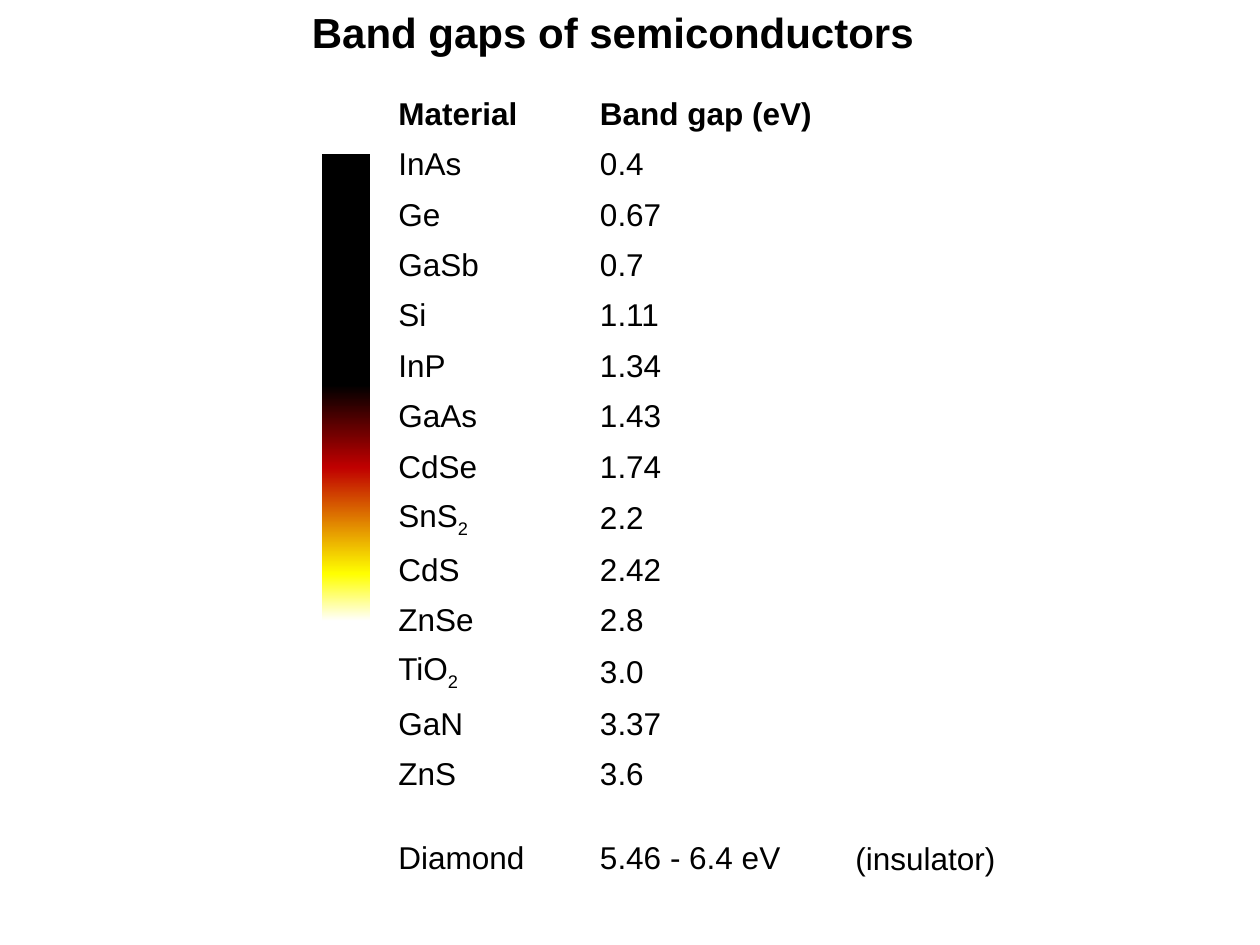
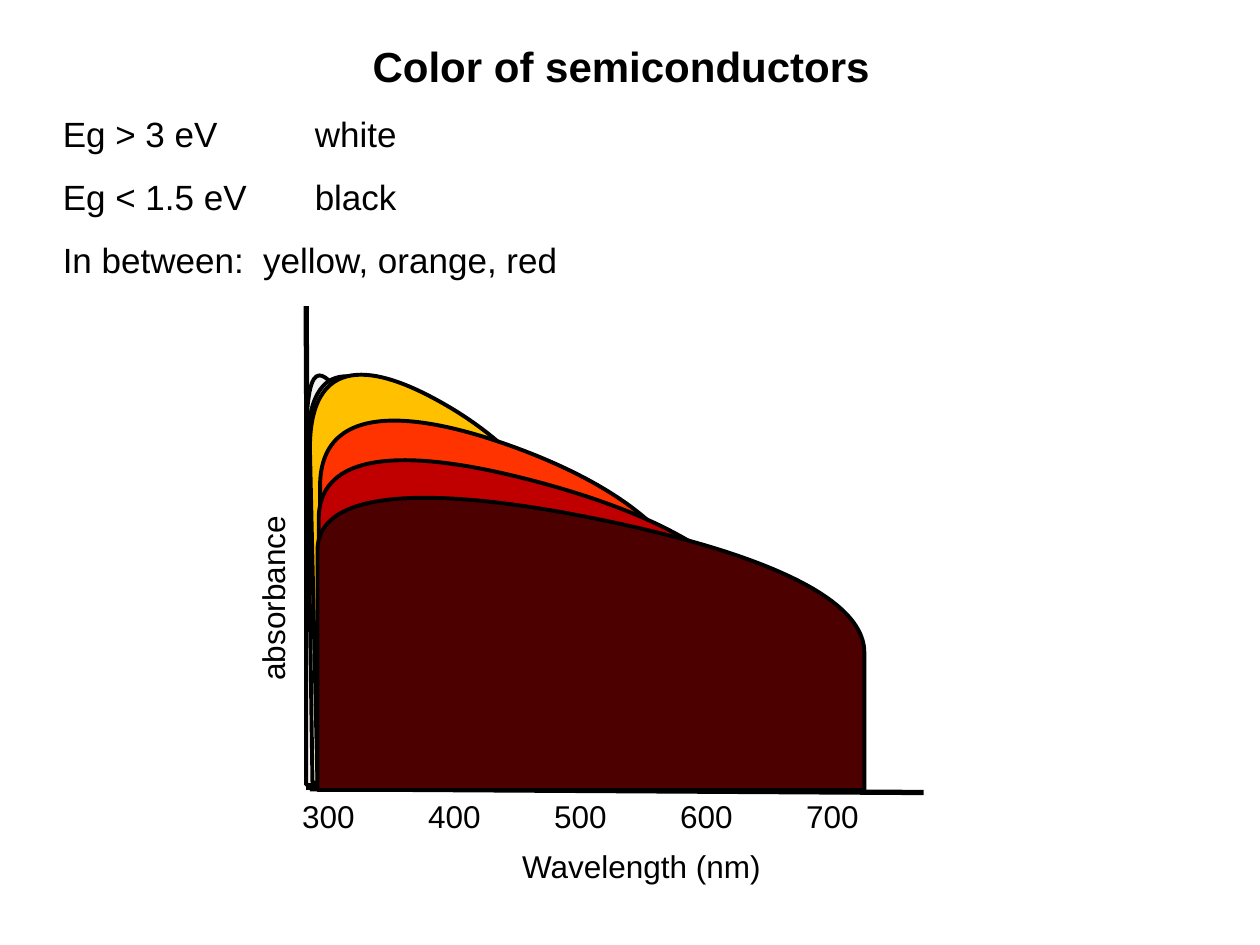
from dataclasses import dataclass

from lxml.etree import SubElement
from pptx import Presentation
from pptx.dml.color import RGBColor
from pptx.enum.shapes import MSO_CONNECTOR, MSO_SHAPE
from pptx.enum.text import MSO_ANCHOR, MSO_AUTO_SIZE, PP_ALIGN
from pptx.oxml.ns import qn
from pptx.util import Inches, Pt

COLUMNS, ROWS = 100, 75
TITLE_ONLY = 5

MATERIALS = [
    ("Material", "Band gap (eV)"),
    ("InAs", "0.4"),
    ("Ge", "0.67"),
    ("GaSb", "0.7"),
    ("Si", "1.11"),
    ("InP", "1.34"),
    ("GaAs", "1.43"),
    ("CdSe", "1.74"),
    ("SnS_2", "2.2"),
    ("CdS", "2.42"),
    ("ZnSe", "2.8"),
    ("TiO_2", "3.0"),
    ("GaN", "3.37"),
    ("ZnS", "3.6"),
    ("Diamond", "5.46 - 6.4 eV"),
]

VISIBLE_COLORS = [(0, "000000"), (39, "000000"), (53, "C00000"),
                  (71, "FFFF00"), (79, "FFFFFF"), (100, "FFFFFF")]


@dataclass(frozen=True)
class Theme:
    """Colours, font and type sizes of the deck."""
    ink: str = "000000"
    font: str = "Arial"
    title: int = 24
    statement: int = 20
    body: int = 18
    axis: float = 3
    outline: float = 2.25


@dataclass(frozen=True)
class Absorption:
    """Outline of one absorption band, in grid units."""
    fill: str
    edge: float
    shoulder: float
    foot: float
    handle: tuple
    crest: tuple
    onset: tuple
    origin: tuple
    pull: float

    def segments(self):
        """Return the lines (one point) and curves (three) from the right foot to the left."""
        edge_pull = (self.edge, self.shoulder - self.pull)
        mirrored = tuple(2 * c - h for c, h in zip(self.crest, self.handle))
        onset_pull = (self.onset[0], self.onset[1] - self.pull)
        return [[(self.edge, self.foot)],
                [(self.edge, self.shoulder)],
                [edge_pull, self.handle, self.crest],
                [mirrored, onset_pull, self.onset],
                [self.origin]]


ABSORPTIONS = [
    Absorption("F2F2F2", 35.2, 47.2, 62.5, (29.5, 34), (27.7, 32), (24.3, 35.4), (24.3, 62.3), 8.4),
    Absorption("FFFFCC", 40.5, 47, 62.3, (34.8, 33.6), (32.1, 31.8), (24.4, 35.6), (24.8, 62.1), 8.4),
    Absorption("FFC000", 45.6, 47, 62.2, (38.1, 33.6), (34.6, 31.7), (24.6, 35.6), (25.2, 62), 8.5),
    Absorption("FF3300", 55.3, 48.7, 62.4, (44.7, 36.8), (39.7, 35.1), (25.4, 38.6), (25.4, 62.3), 7.5),
    Absorption("C00000", 60.3, 50.3, 62.5, (47.9, 39.6), (42.1, 38.1), (25.3, 41.2), (25.3, 62.4), 6.8),
    Absorption("4C0000", 68.6, 51.8, 62.7, (53.2, 42.3), (45.9, 40.9), (25.2, 43.7), (25.2, 62.7), 6),
]


def trace(segments, steps=24):
    """Return points that lie on a run of lines and cubic curves."""
    points = []
    for segment in segments:
        if len(segment) == 1:
            points += segment
            continue
        corners = [points[-1], *segment]
        for step in range(1, steps + 1):
            t = step / steps
            u = 1 - t
            weights = (u ** 3, 3 * u * u * t, 3 * u * t * t, t ** 3)
            points.append(tuple(sum(w * c for w, c in zip(weights, axis))
                                for axis in zip(*corners)))
    return points


def write(frame, text, theme, size=None, bold=False, align=PP_ALIGN.LEFT,
          leading=None, tabs=()):
    """Fill a text frame line by line; "_" makes the rest of a line subscript."""
    for index, line in enumerate(text.split("\n")):
        paragraph = frame.paragraphs[0] if index == 0 else frame.add_paragraph()
        paragraph.alignment = align
        paragraph.space_before = Pt(0)
        if leading:
            paragraph.line_spacing = Pt(leading)
        if tabs:
            stops = SubElement(paragraph._p.get_or_add_pPr(), qn("a:tabLst"))
            for stop in tabs[index]:
                SubElement(stops, qn("a:tab"), pos=str(Inches(stop / 10)), algn="l")
        for level, part in enumerate(line.split("_")):
            run = paragraph.add_run()
            run.text = part
            run.font.name = theme.font
            run.font.size = Pt(size or theme.body)
            run.font.bold = bold
            run.font.color.rgb = RGBColor.from_string(theme.ink)
            if level:
                run._r.get_or_add_rPr().set("baseline", "-25000")


class Deck:
    """Draws styled elements on the current slide of a grid."""

    def __init__(self, theme):
        """Start an empty presentation."""
        self.theme = theme
        self.file = Presentation()
        self.file.slide_width, self.file.slide_height = Inches(10), Inches(7.5)
        self.slide = None

    def x(self, columns):
        """Convert columns to a length."""
        return round(self.file.slide_width * columns / COLUMNS)

    def y(self, rows):
        """Convert rows to a length."""
        return round(self.file.slide_height * rows / ROWS)

    def box(self, left, top, width, height):
        """Convert a grid box to lengths."""
        return self.x(left), self.y(top), self.x(width), self.y(height)

    def new_slide(self, title, *place, align=PP_ALIGN.LEFT):
        """Add a slide with its title in place."""
        self.slide = self.file.slides.add_slide(self.file.slide_layouts[TITLE_ONLY])
        heading = self.slide.shapes.title
        heading.left, heading.top, heading.width, heading.height = self.box(*place)
        frame = heading.text_frame
        frame.auto_size = MSO_AUTO_SIZE.NONE
        frame.vertical_anchor = MSO_ANCHOR.MIDDLE
        write(frame, title, self.theme, size=self.theme.title, bold=True, align=align)

    def text(self, text, *place, rotation=0, **style):
        """Add a wrapped text box."""
        label = self.slide.shapes.add_textbox(*self.box(*place))
        label.rotation = rotation
        label.text_frame.word_wrap = True
        write(label.text_frame, text, self.theme, **style)

    def table(self, entries, left, top, widths, heights):
        """Add a plain table with a bold first row."""
        place = self.box(left, top, sum(widths), sum(heights))
        table = self.slide.shapes.add_table(len(entries), len(widths), *place).table
        table.horz_banding = False
        for column, width in zip(table.columns, widths):
            column.width = self.x(width)
        for index, (row, height) in enumerate(zip(table.rows, heights)):
            row.height = self.y(height)
            last = index == len(entries) - 1
            for cell, entry in zip(row.cells, entries[index]):
                cell.fill.background()
                cell.vertical_anchor = MSO_ANCHOR.BOTTOM if last else MSO_ANCHOR.MIDDLE
                write(cell.text_frame, entry, self.theme, bold=index == 0)

    def gradient_bar(self, stops, *place):
        """Add a bar shaded from top to bottom."""
        bar = self.slide.shapes.add_shape(MSO_SHAPE.RECTANGLE, *self.box(*place))
        bar.shadow.inherit = False
        bar.line.fill.background()
        bar.fill.gradient()
        bar.fill.gradient_angle = 270
        shades = bar._element.spPr.find(qn("a:gradFill")).find(qn("a:gsLst"))
        for shade in list(shades):
            shades.remove(shade)
        for share, color in stops:
            shade = SubElement(shades, qn("a:gs"), pos=str(share * 1000))
            SubElement(shade, qn("a:srgbClr"), val=color)

    def stroke(self, line, width):
        """Format a line in the ink colour."""
        line.color.rgb = RGBColor.from_string(self.theme.ink)
        line.width = Pt(width)

    def axis(self, x1, y1, x2, y2):
        """Add a straight axis line."""
        axis = self.slide.shapes.add_connector(
            MSO_CONNECTOR.STRAIGHT, self.x(x1), self.y(y1), self.x(x2), self.y(y2))
        self.stroke(axis.line, self.theme.axis)
        SubElement(axis._element.spPr, qn("a:effectLst"))

    def band(self, absorption):
        """Add a filled absorption band, sized to its outline and drawn with true curves."""
        segments = absorption.segments()
        start, *rest = [(self.x(x), self.y(y)) for x, y in trace(segments)]
        builder = self.slide.shapes.build_freeform(*start)
        builder.add_line_segments(rest, close=True)
        band = builder.convert_to_shape()
        outline = next(band._element.spPr.iter(qn("a:path")))
        for step in list(outline):
            outline.remove(step)
        for index, segment in enumerate(segments):
            straight = "lnTo" if index else "moveTo"
            kind = straight if len(segment) == 1 else "cubicBezTo"
            step = SubElement(outline, qn(f"a:{kind}"))
            for x, y in segment:
                SubElement(step, qn("a:pt"), x=str(self.x(x) - band.left),
                           y=str(self.y(y) - band.top))
        SubElement(outline, qn("a:close"))
        band.shadow.inherit = False
        band.fill.solid()
        band.fill.fore_color.rgb = RGBColor.from_string(absorption.fill)
        self.stroke(band.line, self.theme.outline)


def draw_band_gaps(deck):
    """Draw the table of band gaps beside the visible colours."""
    deck.new_slide("Band gaps of semiconductors", 23.75, 0.05, 60.3, 5)
    heights = [4] * (len(MATERIALS) - 1) + [6.6]
    deck.table(MATERIALS, 30.62, 7.07, [16, 22.3], heights)
    deck.text("(insulator)", 66.9, 66.1, 26.5, 4)
    deck.gradient_bar(VISIBLE_COLORS, 25.55, 12.25, 3.8, 46.9)


def draw_colors(deck):
    """Draw the colour rules above the absorption spectra."""
    deck.new_slide("Color of semiconductors", 4, 2.74, 90.6, 5, align=PP_ALIGN.CENTER)
    deck.axis(24.3, 24.3, 24.5, 62.7)
    deck.axis(73.3, 62.9, 24.6, 62.6)
    deck.text("Wavelength (nm)", 40.45, 66.7, 23, 4.2)
    deck.text("absorbance", 10.15, 41.5, 23, 4, rotation=270)
    wavelengths = range(300, 701, 100)
    deck.text("\t".join(map(str, wavelengths)), 23, 62.75, 57.4, 4,
              tabs=[[10 * step for step in range(1, len(wavelengths))]])
    for absorption in ABSORPTIONS:
        deck.band(absorption)
    deck.text("Eg > 3 eV\twhite\nEg < 1.5 eV\tblack\nIn between:\tyellow, orange, red",
              4, 6.8, 90.6, 16, size=deck.theme.statement, leading=36,
              tabs=[[20], [20], [15.9]])


def main():
    """Build and save the deck."""
    deck = Deck(Theme())
    draw_band_gaps(deck)
    draw_colors(deck)
    deck.file.save("out.pptx")


if __name__ == "__main__":
    main()
